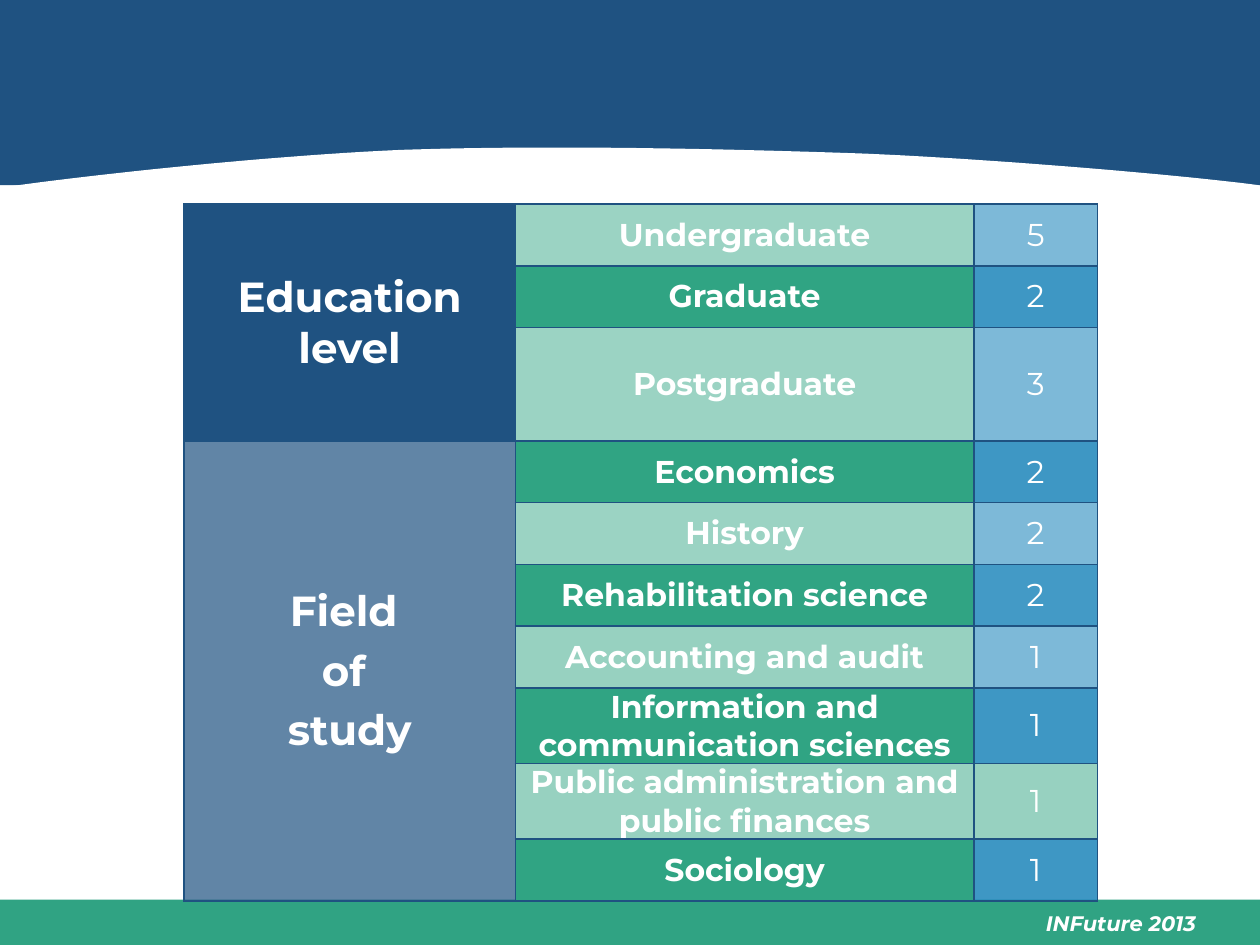
from dataclasses import dataclass

from lxml import etree
from pptx import Presentation
from pptx.dml.color import RGBColor
from pptx.enum.shapes import MSO_SHAPE
from pptx.enum.text import MSO_ANCHOR, PP_ALIGN
from pptx.oxml.ns import qn
from pptx.util import Inches, Pt

RECTANGLE = MSO_SHAPE.RECTANGLE
MIDDLE = MSO_ANCHOR.MIDDLE
CENTER, RIGHT = PP_ALIGN.CENTER, PP_ALIGN.RIGHT

FONT = "Montserrat"
COLORS = {"navy": "1F5281", "green": "30A483", "footer": "30A383",
          "blue": "1481B8", "white": "FFFFFF"}
ROW_HEIGHT = 0.49
COLUMN_WIDTHS = (2.63, 3.64, 0.98)


@dataclass
class Tint:
    color: str
    opacity: int = 100


@dataclass
class Category:
    label: str
    count: int
    label_tint: Tint
    count_tint: Tint
    height: float = ROW_HEIGHT


@dataclass
class Group:
    heading: str
    tint: Tint
    categories: list[Category]


GREEN, PALE_GREEN, MINT = Tint("green"), Tint("green", 48), Tint("green", 50)
BLUE, MID_BLUE, PALE_BLUE = Tint("blue", 82), Tint("blue", 80), Tint("blue", 55)

GROUPS = [
    Group("Education level", Tint("navy"), [
        Category("Undergraduate", 5, PALE_GREEN, PALE_BLUE),
        Category("Graduate", 2, GREEN, BLUE),
        Category("Postgraduate", 3, PALE_GREEN, PALE_BLUE, 0.9),
    ]),
    Group("Field \nof \nstudy", Tint("navy", 70), [
        Category("Economics", 2, GREEN, BLUE),
        Category("History", 2, PALE_GREEN, PALE_BLUE),
        Category("Rehabilitation science", 2, GREEN, MID_BLUE),
        Category("Accounting and audit", 1, MINT, PALE_BLUE),
        Category("Information and communication sciences", 1, GREEN, BLUE, 0.6),
        Category("Public administration and public finances", 1, MINT, MINT, 0.6),
        Category("Sociology", 1, GREEN, BLUE),
    ]),
]

# Top edge of the white arc: start point, then control, control, end
ARC_START = (0.01, 1.49)
ARC_CURVES = [
    ((0.53, 1.41), (2.04, 1.24), (3.18, 1.19)),
    ((4.33, 1.15), (5.75, 1.18), (6.88, 1.22)),
    ((8.02, 1.27), (9.47, 1.4), (9.99, 1.47)),
]
ARC_STEPS = 24


def rgb(name: str) -> RGBColor:
    return RGBColor.from_string(COLORS[name])


def paint(shape, color: str) -> None:
    shape.fill.solid()
    shape.fill.fore_color.rgb = rgb(color)
    shape.line.fill.background()
    shape.shadow.inherit = False


def add_band(slide, top: float, height: float, color: str) -> None:
    band = slide.shapes.add_shape(
        RECTANGLE, 0, Inches(top), Inches(10), Inches(height))
    paint(band, color)


def bezier_point(points, t: float) -> tuple[float, float]:
    weights = ((1 - t) ** 3, 3 * t * (1 - t) ** 2, 3 * t * t * (1 - t), t ** 3)
    x, y = (sum(w * p[axis] for w, p in zip(weights, points)) for axis in (0, 1))
    return x, y


def add_arc(slide) -> None:
    outline = [ARC_START]
    for curve in ARC_CURVES:
        controls = (outline[-1], *curve)
        outline += [bezier_point(controls, step / ARC_STEPS)
                    for step in range(1, ARC_STEPS + 1)]
    outline.append((10, 1.66))
    builder = slide.shapes.build_freeform(0, Inches(1.65), scale=1.0)
    builder.add_line_segments([(Inches(x), Inches(y)) for x, y in outline], close=True)
    paint(builder.convert_to_shape(), "white")


def format_text(frame, size: int, bold: bool, align=CENTER, italic: bool = False,
                space_before: float = 0) -> None:
    for paragraph in frame.paragraphs:
        paragraph.alignment = align
        paragraph.space_before = Pt(space_before)
        for run in paragraph.runs:
            font = run.font
            font.name, font.size = FONT, Pt(size)
            font.bold, font.italic = bold, italic
            font.color.rgb = rgb("white")


def style_cell(cell, tint: Tint) -> None:
    # Borders come before the fill in the cell properties
    properties = cell._tc.get_or_add_tcPr()
    for side in ("a:lnL", "a:lnR", "a:lnT", "a:lnB"):
        border = etree.SubElement(properties, qn(side), w=str(Pt(1)))
        solid = etree.SubElement(border, qn("a:solidFill"))
        etree.SubElement(solid, qn("a:srgbClr"), val=COLORS["navy"])
    cell.fill.solid()
    cell.fill.fore_color.rgb = rgb(tint.color)
    if tint.opacity < 100:
        color = properties.find(qn("a:solidFill")).find(qn("a:srgbClr"))
        etree.SubElement(color, qn("a:alpha"), val=str(tint.opacity * 1000))
    cell.vertical_anchor = MIDDLE


def fill_category_cell(cell, text: str, tint: Tint, bold: bool) -> None:
    style_cell(cell, tint)
    cell.margin_left = cell.margin_right = Inches(0.07)
    cell.margin_top = cell.margin_bottom = 0
    cell.text_frame.text = text
    format_text(cell.text_frame, 18, bold)


def add_participants_table(slide) -> None:
    categories = [category for group in GROUPS for category in group.categories]
    table = slide.shapes.add_table(
        len(categories), len(COLUMN_WIDTHS), Inches(1.46), Inches(1.62),
        Inches(sum(COLUMN_WIDTHS)), Inches(sum(c.height for c in categories))).table
    table.first_row = table.horz_banding = False
    for column, width in zip(table.columns, COLUMN_WIDTHS):
        column.width = Inches(width)

    first = 0
    for group in GROUPS:
        for row, category in enumerate(group.categories, first):
            table.rows[row].height = Inches(category.height)
            style_cell(table.cell(row, 0), group.tint)
            fill_category_cell(table.cell(row, 1), category.label,
                               category.label_tint, True)
            fill_category_cell(table.cell(row, 2), str(category.count),
                               category.count_tint, False)
        heading = table.cell(first, 0)
        heading.merge(table.cell(row, 0))
        heading.text_frame.text = group.heading
        format_text(heading.text_frame, 24, True, space_before=4.8)
        first = row + 1


def add_footer_text(slide) -> None:
    box = slide.shapes.add_textbox(
        Inches(6.67), Inches(7.18), Inches(2.92), Inches(0.3))
    box.text_frame.word_wrap = True
    box.text_frame.text = "INFuture 2013"
    format_text(box.text_frame, 12, True, RIGHT, italic=True)


def main() -> None:
    presentation = Presentation()
    presentation.slide_width, presentation.slide_height = Inches(10), Inches(7.5)
    slide = presentation.slides.add_slide(presentation.slide_layouts[6])

    # Header and footer decoration
    add_band(slide, 7.14, 0.36, "footer")
    add_band(slide, 0, 1.47, "navy")
    add_footer_text(slide)
    add_arc(slide)

    # Content
    add_participants_table(slide)
    presentation.save("out.pptx")


if __name__ == "__main__":
    main()
